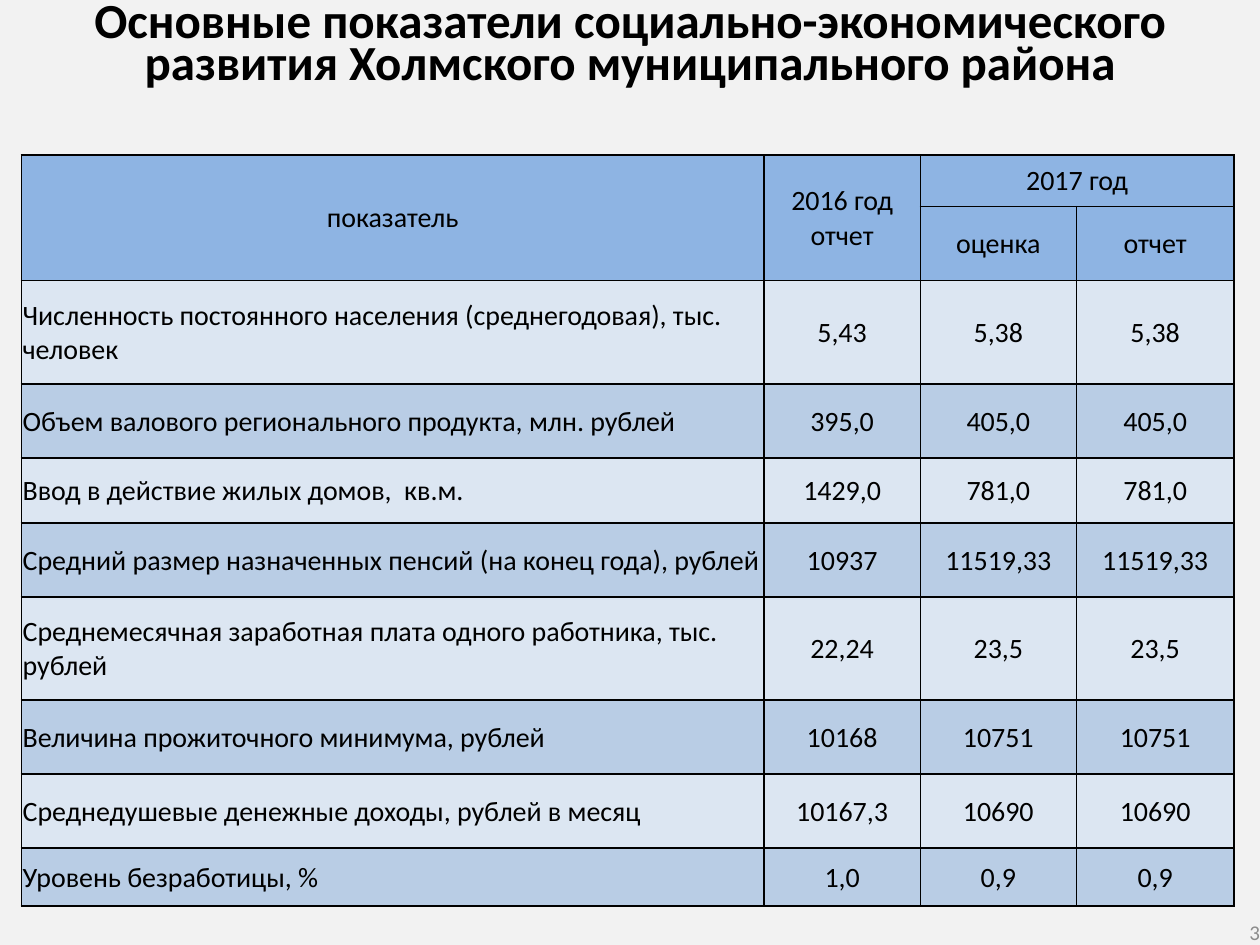
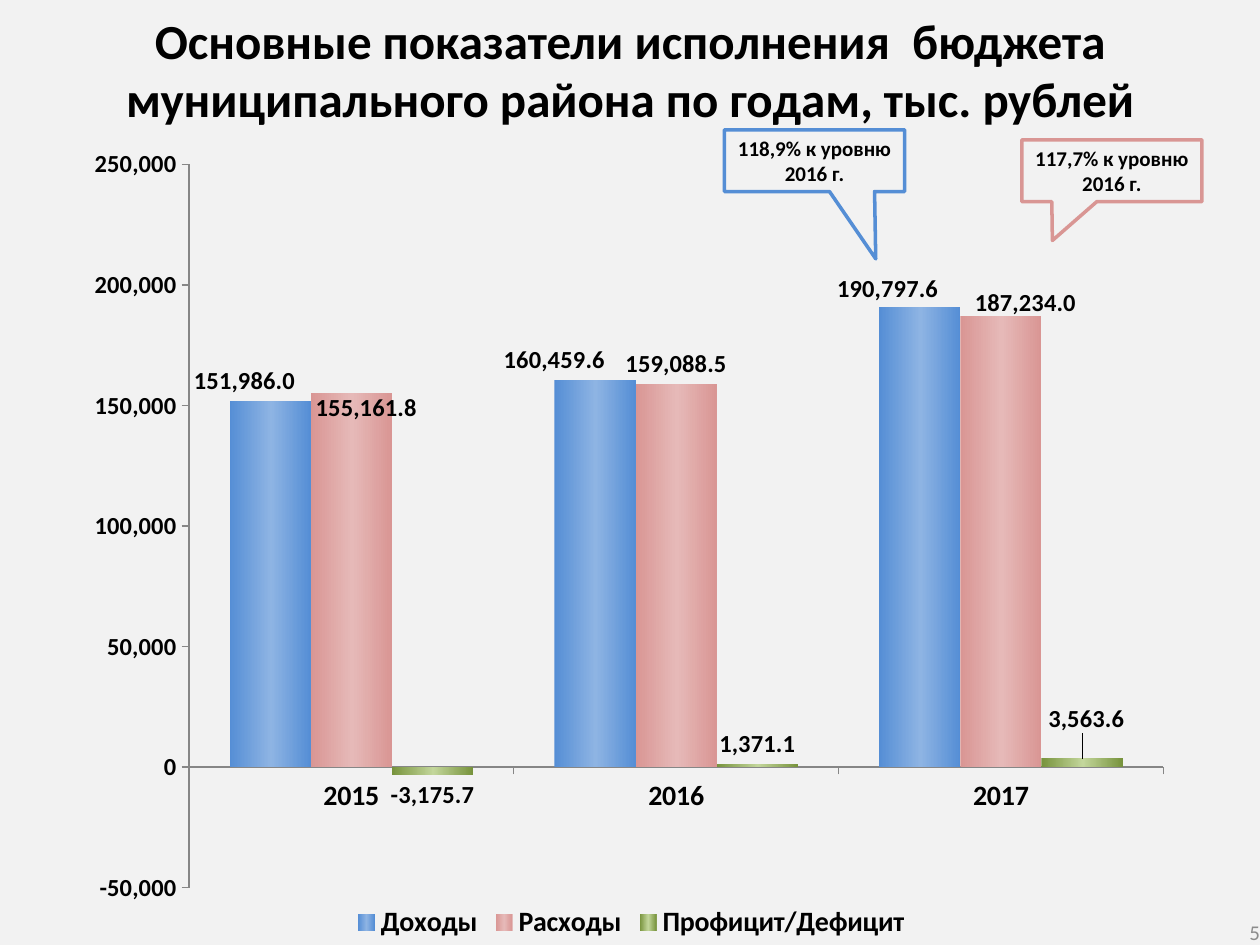
from copy import deepcopy
from dataclasses import dataclass

from pptx import Presentation
from pptx.chart.data import CategoryChartData
from pptx.dml.color import RGBColor
from pptx.enum.chart import XL_CHART_TYPE, XL_LABEL_POSITION, XL_LEGEND_POSITION, XL_TICK_MARK
from pptx.enum.shapes import MSO_SHAPE
from pptx.enum.text import MSO_ANCHOR, PP_ALIGN
from pptx.oxml.xmlchemy import OxmlElement
from pptx.util import Inches, Pt

FONT = "Calibri"
BLACK, BACKGROUND, PAGE_GREY, AXIS_GREY = "000000", "F2F2F2", "8C8C8C", "868686"
HEADER_BLUE, ROW_FILLS = "8EB4E3", ("DCE6F2", "B9CDE5")
INCOME, EXPENSE, BALANCE = "558ED5", "D99694", "77933C"
SLIDE_WIDTH, SLIDE_HEIGHT = Inches(10), Inches(7.5)
COLUMN, ROW = SLIDE_WIDTH // 100, SLIDE_HEIGHT // 75
LABEL_FORMAT = "#,##0.0"

COLUMN_WIDTHS = (58.94, 12.4, 12.4, 12.5)
ROW_HEIGHTS = (4.1, 5.87, 8.21, 5.87, 5.16, 5.87, 8.21, 5.87, 5.87, 4.6)
INDICATORS = (
    ("Численность постоянного населения (среднегодовая), тыс. человек", "5,43", "5,38", "5,38"),
    ("Объем валового регионального продукта, млн. рублей", "395,0", "405,0", "405,0"),
    ("Ввод в действие жилых домов,  кв.м.", "1429,0", "781,0", "781,0"),
    ("Средний размер назначенных пенсий (на конец года), рублей", "10937", "11519,33", "11519,33"),
    ("Среднемесячная заработная плата одного работника, тыс. рублей", "22,24", "23,5", "23,5"),
    ("Величина прожиточного минимума, рублей", "10168", "10751", "10751"),
    ("Среднедушевые денежные доходы, рублей в месяц", "10167,3", "10690", "10690"),
    ("Уровень безработицы, %", "1,0", "0,9", "0,9"),
)
YEARS = ("2015", "2016", "2017")
BUDGET = (
    ("Доходы", (151986, 160459.6, 190797.6), (INCOME, "8EB4E3"),
     {0: (-2.4, 0), 1: (-3.8, 0), 2: (-3, 0.2)}),
    ("Расходы", (155161.8, 159088.5, 187234), (EXPENSE, "E6B9B8"),
     {0: (1.4, 4.3), 2: (2.3, 0.9)}),
    ("Профицит/Дефицит", (-3175.7, 1371.1, 3563.6), (BALANCE, "C3D69B"),
     {2: (0.4, -2.4)}),
)


@dataclass
class Box:
    """A region measured in columns and rows of the slide grid."""
    left: float
    top: float
    width: float
    height: float

    def place(self):
        """Return the region as lengths."""
        return (int(self.left * COLUMN), int(self.top * ROW),
                int(self.width * COLUMN), int(self.height * ROW))

    def inner(self, left, top, width, height):
        """Return a region offset from this one."""
        return Box(self.left + left, self.top + top, width, height)


def rgb(value):
    """Turn a hex string into a colour."""
    return RGBColor.from_string(value)


def element(tag, *children, **attributes):
    """Build an XML element with its attributes and children."""
    node = OxmlElement(tag)
    for name, value in attributes.items():
        node.set(name, str(value))
    node.extend(children)
    return node


def style_font(font, size, color=BLACK, bold=False):
    """Apply the shared typeface with a size, colour and weight."""
    font.name, font.size, font.bold = FONT, Pt(size), bold
    font.color.rgb = rgb(color)


def write(text_frame, text, size, color=BLACK, bold=False, align=PP_ALIGN.CENTER):
    """Fill a text frame with one styled paragraph."""
    text_frame.word_wrap = True
    text_frame.text = text
    paragraph = text_frame.paragraphs[0]
    paragraph.alignment = align
    style_font(paragraph.runs[0].font, size, color, bold)
    return paragraph


def set_insets(holder, left, top, right, bottom):
    """Set the four text margins in inches."""
    holder.margin_left, holder.margin_top = Inches(left), Inches(top)
    holder.margin_right, holder.margin_bottom = Inches(right), Inches(bottom)


def add_base(presentation, title, title_box, page):
    """Add a slide with its background, title and page number."""
    slide = presentation.slides.add_slide(presentation.slide_layouts[6])
    slide.background.fill.solid()
    slide.background.fill.fore_color.rgb = rgb(BACKGROUND)
    title_frame = slide.shapes.add_textbox(*title_box.place()).text_frame
    write(title_frame, title, 28, bold=True)
    page_frame = slide.shapes.add_textbox(*Box(76.7, 72.9, 23.3, 2.1).place()).text_frame
    set_insets(page_frame, 0, 0, 0, 0)
    page_frame.vertical_anchor = MSO_ANCHOR.MIDDLE
    write(page_frame, page, 12, PAGE_GREY, align=PP_ALIGN.RIGHT)
    return slide, title_frame


def add_text_shadow(run):
    """Give the letters of a run a soft shadow."""
    color = element("a:srgbClr", element("a:alpha", val=43000), val=BLACK)
    shadow = element("a:outerShdw", color, blurRad=38100, dist=38100, dir=2700000, algn="tl")
    run._r.xpath("./a:rPr/a:solidFill")[0].addnext(element("a:effectLst", shadow))


def style_cell(cell, text, fill, align=PP_ALIGN.CENTER):
    """Write, fill and outline one table cell."""
    cell.fill.solid()
    cell.fill.fore_color.rgb = rgb(fill)
    cell.vertical_anchor = MSO_ANCHOR.MIDDLE
    set_insets(cell, 0.01, 0.01, 0.01, 0)
    if text:
        write(cell.text_frame, text, 16, align=align)
    for index, side in enumerate("LRTB"):
        stroke = element("a:solidFill", element("a:srgbClr", val=BLACK))
        cell._tc.get_or_add_tcPr().insert(index, element(f"a:ln{side}", stroke, w=Pt(1)))


def add_indicator_table(slide, box):
    """Place the table of indicators with its two-level header."""
    table = slide.shapes.add_table(len(ROW_HEIGHTS), len(COLUMN_WIDTHS), *box.place()).table
    table.first_row = table.horz_banding = False
    for column, width in zip(table.columns, COLUMN_WIDTHS):
        column.width = int(width * COLUMN)
    for row, height in zip(table.rows, ROW_HEIGHTS):
        row.height = int(height * ROW)
    header = (("показатель", "2016 год отчет", "2017 год", ""), ("", "", "оценка", "отчет"))
    for row, texts in enumerate(header):
        for column, text in enumerate(texts):
            style_cell(table.cell(row, column), text, HEADER_BLUE)
    for row, texts in enumerate(INDICATORS):
        for column, text in enumerate(texts):
            align = PP_ALIGN.CENTER if column else PP_ALIGN.LEFT
            style_cell(table.cell(row + 2, column), text, ROW_FILLS[row % 2], align)
    for start, end in (((0, 0), (1, 0)), ((0, 1), (1, 1)), ((0, 2), (0, 3))):
        table.cell(*start).merge(table.cell(*end))


def manual_layout(**percents):
    """Build a chart layout from percentages of the chart size."""
    values = [element(f"c:{name}", val=round(share / 100, 4)) for name, share in percents.items()]
    return element("c:layout", element("c:manualLayout", *values))


def fill_gradient(series, edge, middle):
    """Fill the columns of a series from edge to middle to edge."""
    fill = series.format.fill
    fill.gradient()
    fill.gradient_angle = 0
    stop_list = series._element.xpath("./c:spPr/a:gradFill/a:gsLst")[0]
    stop_list.append(deepcopy(stop_list[0]))
    for stop, position, color in zip(fill.gradient_stops, (0, 0.51, 1), (edge, middle, edge)):
        stop.position = position
        stop.color.rgb = rgb(color)


def label_series(series, shifts):
    """Show the values of a series and shift the chosen labels."""
    labels = series.data_labels
    labels.show_value = True
    labels.number_format, labels.number_format_is_linked = LABEL_FORMAT, False
    labels.position = XL_LABEL_POSITION.OUTSIDE_END
    style_font(labels.font, 14, bold=True)
    for index, (x, y) in shifts.items():
        label = series.points[index].data_label
        label.position = XL_LABEL_POSITION.OUTSIDE_END
        style_font(label.font, 14, bold=True)
        anchor = series._element.xpath(f"./c:dLbls/c:dLbl/c:idx[@val='{index}']")[0]
        anchor.addnext(element("c:numFmt", formatCode=LABEL_FORMAT, sourceLinked=0))
        anchor.addnext(manual_layout(x=x, y=y))


def style_axis(axis, size):
    """Set the ticks, line and font of an axis."""
    axis.has_major_gridlines = False
    axis.major_tick_mark, axis.minor_tick_mark = XL_TICK_MARK.OUTSIDE, XL_TICK_MARK.NONE
    axis.format.line.color.rgb = rgb(AXIS_GREY)
    axis.format.line.width = Pt(0.75)
    style_font(axis.tick_labels.font, size, bold=True)


def add_budget_chart(slide, box):
    """Place the column chart of income, expense and balance."""
    data = CategoryChartData(number_format=LABEL_FORMAT)
    data.categories = YEARS
    for name, values, _, _ in BUDGET:
        data.add_series(name, values)
    chart = slide.shapes.add_chart(XL_CHART_TYPE.COLUMN_CLUSTERED, *box.place(), data).chart
    style_font(chart.font, 14, bold=True)
    chart.has_title = False
    chart.has_legend = True
    chart.legend.position = XL_LEGEND_POSITION.BOTTOM
    chart.legend.include_in_layout = False
    style_font(chart.legend.font, 16, bold=True)
    style_axis(chart.category_axis, 16)
    value_axis = chart.value_axis
    style_axis(value_axis, 14)
    value_axis.minimum_scale, value_axis.maximum_scale = -50000, 250000
    value_axis.major_unit = 50000
    value_axis.tick_labels.number_format = "#,##0"
    value_axis.tick_labels.number_format_is_linked = False
    plot = chart.plots[0]
    plot.gap_width, plot.vary_by_categories = 100, False
    for series, (_, _, colors, shifts) in zip(plot.series, BUDGET):
        series.invert_if_negative = False
        fill_gradient(series, *colors)
        label_series(series, shifts)
    area = chart._chartSpace.xpath("./c:chart/c:plotArea")[0]
    for layout in area.xpath("./c:layout"):
        area.remove(layout)
    layout = manual_layout(x=8.6, y=4.7, w=91.2, h=88.3)
    layout[0].insert(0, element("c:layoutTarget", val="inner"))
    for index, name in enumerate("xy", 1):
        layout[0].insert(index, element(f"c:{name}Mode", val="edge"))
    area.insert(0, layout)


def add_callout(slide, box, text, color, tip):
    """Place a callout whose tip is given in shares of its size."""
    shape = slide.shapes.add_shape(MSO_SHAPE.RECTANGULAR_CALLOUT, *box.place())
    shape.shadow.inherit = False
    shape.fill.background()
    shape.line.color.rgb = rgb(color)
    shape.line.width = Pt(2)
    shape.adjustments[0], shape.adjustments[1] = tip
    write(shape.text_frame, text, 12, bold=True)


def build_indicator_slide(presentation):
    """Build the slide with the table of indicators."""
    title = "Основные показатели социально-экономического развития Холмского муниципального района"
    slide, title_frame = add_base(presentation, title, Box(0, 0, 100, 10.2), "3")
    paragraph = title_frame.paragraphs[0]
    paragraph.line_spacing = Pt(24)
    add_text_shadow(paragraph.runs[0])
    add_indicator_table(slide, Box(1.7, 12.3, 96.3, 59.6))


def build_budget_slide(presentation):
    """Build the slide with the budget chart and its callouts."""
    title = "Основные показатели исполнения  бюджета муниципального района по годам, тыс. рублей"
    slide, title_frame = add_base(presentation, title, Box(0, 0, 100, 10.7), "5")
    set_insets(title_frame, 0.1, 0.08, 0.1, 0.05)
    chart_box = Box(7.5, 10, 85, 65)
    add_budget_chart(slide, chart_box)
    add_callout(slide, chart_box.inner(50, 0.3, 14.3, 4.9),
                "118,9% к уровню 2016 г.", INCOME, (0.34, 1.59))
    add_callout(slide, chart_box.inner(73.6, 1.1, 14.3, 4.9),
                "117,7% к уровню 2016 г.", EXPENSE, (-0.33, 1.13))


def main():
    """Build and save the presentation."""
    presentation = Presentation()
    presentation.slide_width, presentation.slide_height = SLIDE_WIDTH, SLIDE_HEIGHT
    build_indicator_slide(presentation)
    build_budget_slide(presentation)
    presentation.save("out.pptx")


if __name__ == "__main__":
    main()
